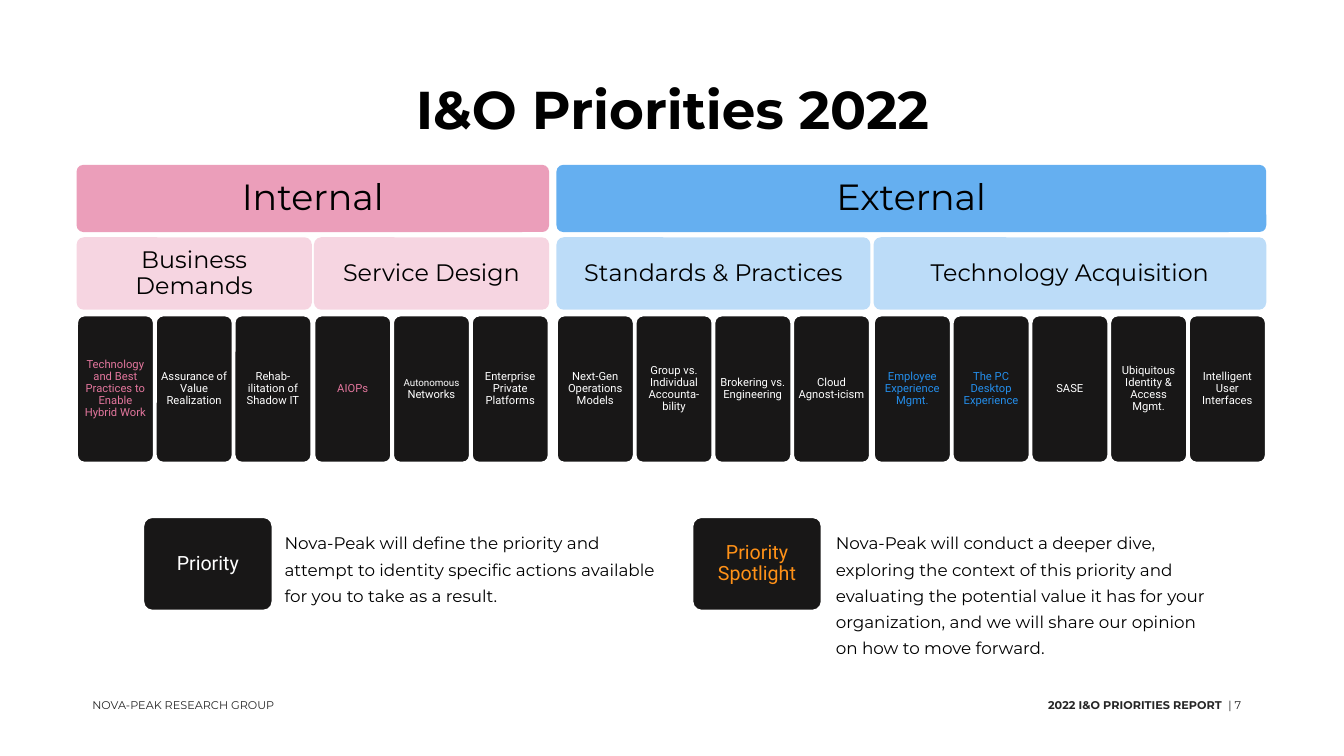
from lxml import etree
from pptx import Presentation
from pptx import util as u
from pptx.dml.color import RGBColor
from pptx.enum import shapes, text
from pptx.oxml.ns import qn

PX = 9525  # EMU per px, 96 px to the inch
PITCH = 75  # distance between neighbouring cards
PINK, BLUE, ORANGE = "E3769D", "248EEB", "FF9117"
BLACK, WHITE, CARD, GREY = "000000", "FFFFFF", "181717", "262626"


def rgb(hex_string):
    return RGBColor.from_string(hex_string)


class PrioritiesSlide:
    heading_font = "Montserrat"
    card_font = "Roboto"

    def __init__(self, presentation):
        self.slide = presentation.slides.add_slide(presentation.slide_layouts[5])

    def set_text(self, frame, runs, color, font, inset, bold=False,
                 align=text.PP_ALIGN.CENTER, anchor=text.MSO_ANCHOR.MIDDLE, spacing=0.9):
        """Fill a frame with one paragraph made of (words, size) runs."""
        frame.word_wrap = True
        frame.auto_size = text.MSO_AUTO_SIZE.NONE
        frame.vertical_anchor = anchor
        frame.margin_left = frame.margin_right = inset * PX
        frame.margin_top = frame.margin_bottom = inset * PX
        paragraph = frame.paragraphs[0]
        paragraph.alignment = align
        paragraph.line_spacing = spacing
        for words, size in runs:
            run = paragraph.add_run()
            run.text = words
            run.font.size = u.Pt(size)
            run.font.name = font
            run.font.bold = bold
            run.font.color.rgb = rgb(color)

    def title(self, words, left, top, width, height):
        title = self.slide.shapes.title
        title.left, title.top = left * PX, top * PX
        title.width, title.height = width * PX, height * PX
        self.set_text(title.text_frame, [(words, 38)], BLACK, self.heading_font, 15, bold=True)

    def rounded(self, left, top, width, height, fill):
        box = self.slide.shapes.add_shape(
            shapes.MSO_SHAPE.ROUNDED_RECTANGLE,
            left * PX, top * PX, width * PX, height * PX)
        box.adjustments[0] = 0.1
        box.shadow.inherit = False
        box.fill.solid()
        box.fill.fore_color.rgb = rgb(fill)
        return box

    def band(self, words, size, left, top, width, height, fill, opacity, inset):
        band = self.rounded(left, top, width, height, fill)
        band.line.fill.background()
        color = band.element.spPr.find(qn("a:solidFill"))[0]
        etree.SubElement(color, qn("a:alpha"), val=str(opacity * 1000))
        self.set_text(band.text_frame, [(words, size)], BLACK, self.heading_font, inset)

    def card(self, runs, left, top, width, height, color=WHITE):
        card = self.rounded(left, top, width, height, CARD)
        card.line.color.rgb = rgb(WHITE)
        card.line.width = u.Pt(2)
        self.set_text(card.text_frame, runs, color, self.card_font, 3)

    def note(self, words, size, left, top, width, height, color=BLACK, inset=0,
             bold=False, align=text.PP_ALIGN.LEFT, spacing=1.0):
        note = self.slide.shapes.add_textbox(left * PX, top * PX, width * PX, height * PX)
        self.set_text(note.text_frame, [(words, size)], color, self.heading_font, inset,
                      bold, align, text.MSO_ANCHOR.TOP, spacing)


# Areas: name, colour, groups; group: name, left, number of spotlights, priorities
AREAS = [
    ("Internal", PINK, [
        ("Business Demands", 73, 1, [
            "Technology and Best Practices to Enable Hybrid Work",
            "Assurance of Value Realization",
            "Rehab-ilitation of Shadow IT"]),
        ("Service Design", 299, 1, [
            "AIOPs", "Autonomous Networks", "Enterprise Private Platforms"]),
    ]),
    ("External", BLUE, [
        ("Standards & Practices", 530, 0, [
            "Next-Gen Operations Models",
            "Group vs. Individual Accounta- bility",
            "Brokering vs. Engineering",
            "Cloud Agnost-icism"]),
        ("Technology Acquisition", 832, 2, [
            "Employee Experience Mgmt.",
            "The PC Desktop Experience",
            "SASE",
            "Ubiquitous Identity & Access Mgmt.",
            "Intelligent User Interfaces"]),
    ]),
]
MIXED_SIZES = {"Autonomous Networks": [("Autonomous", 7), (" Networks", 8)]}

# Legend: label, colour, card left, note left, explanation
LEGEND = [
    ("Priority", WHITE, 136, 261,
     "Nova-Peak will define the priority and attempt to identity specific "
     "actions available for you to take as a result."),
    ("Priority Spotlight", ORANGE, 659, 786,
     "Nova-Peak will conduct a deeper dive, exploring the context of this priority "
     "and evaluating the potential value it has for your organization, and we will "
     "share our opinion on how to move forward."),
]


def main():
    presentation = Presentation()
    presentation.slide_width, presentation.slide_height = 1280 * PX, 720 * PX
    page = PrioritiesSlide(presentation)
    page.title("I&O Priorities 2022", 76, 63, 1129, 88)

    # Priority map
    for area, color, groups in AREAS:
        area_left = groups[0][1]
        area_right = groups[-1][1] + PITCH * len(groups[-1][3]) - 1
        page.band(area, 26, area_left, 157, area_right - area_left, 64, color, 70, 11)
        for group, left, spotlights, priorities in groups:
            page.band(group, 17, left, 226, PITCH * len(priorities) - 1, 69, color, 30, 7)
            for i, priority in enumerate(priorities):
                runs = MIXED_SIZES.get(priority, [(priority, 8)])
                page.card(runs, left + i * PITCH, 300, PITCH - 1, 141,
                          color if i < spotlights else WHITE)

    # Legend
    for label, color, card_left, note_left, explanation in LEGEND:
        page.card([(label, 14)], card_left, 492, 124, 90, color)
        page.note(explanation, 12, note_left, 492, 374, 116, inset=10, spacing=1.3)

    # Footer
    page.note("NOVA-PEAK RESEARCH GROUP", 8, 88, 665, 206, 13, GREY)
    page.note("2022 I&O PRIORITIES REPORT", 8, 913, 665, 251, 13, GREY,
              bold=True, align=text.PP_ALIGN.RIGHT)
    page.note("| 7", 8, 1170, 665, 47, 13, GREY)

    presentation.save("out.pptx")


if __name__ == "__main__":
    main()
